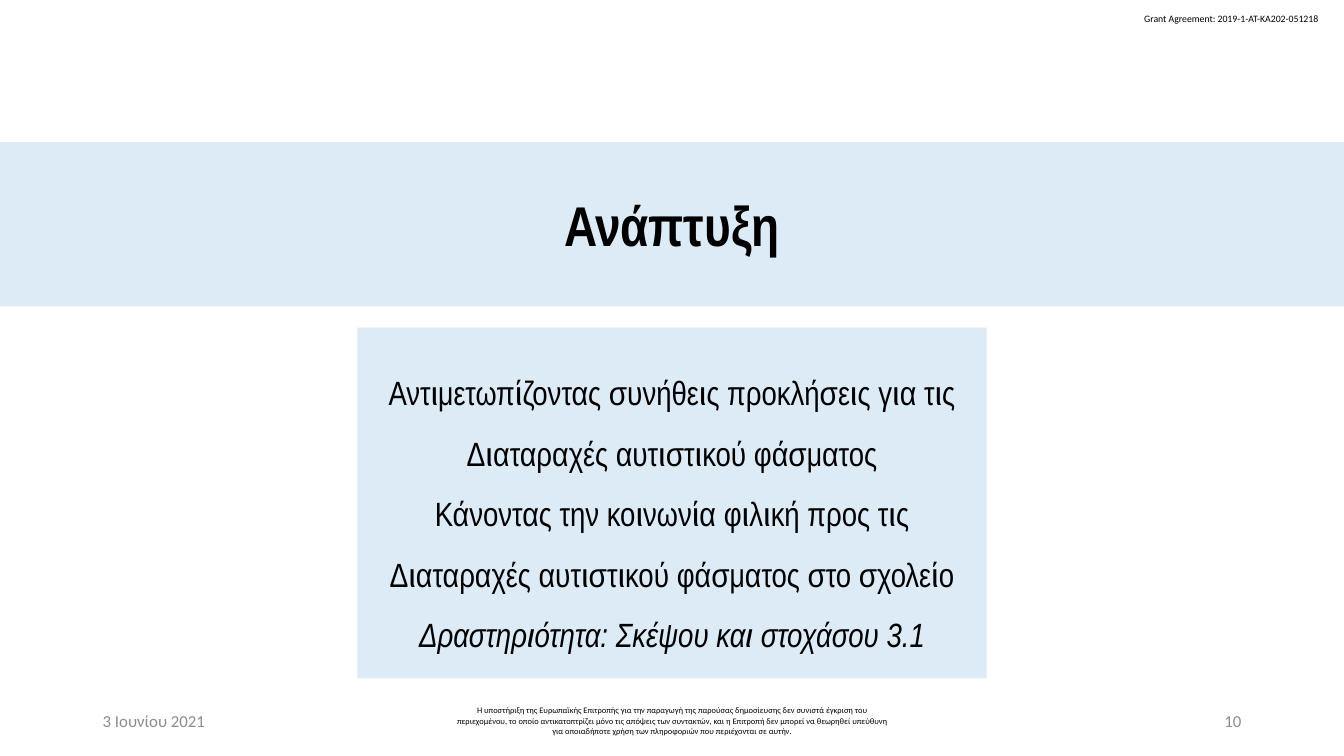
import pptx
import pptx.util
import pptx.dml.color
import pptx.enum.shapes
import pptx.enum.text

Inches, Pt = pptx.util.Inches, pptx.util.Pt
ALIGN = pptx.enum.text.PP_ALIGN
ANCHOR = pptx.enum.text.MSO_ANCHOR

WIDTH, HEIGHT = 13.33, 7.5
COLORS = {"panel": "DDEBF7", "text": "000000", "muted": "8C8C8C"}
FOOTER_TOP, FOOTER_HEIGHT = 6.95, 0.4
MARGIN, DATE_WIDTH, NOTICE_WIDTH = 0.92, 3, 4.5

TOPICS = [
    ("Αντιμετωπίζοντας συνήθεις προκλήσεις για τις Διαταραχές αυτιστικού φάσματος", False),
    ("Κάνοντας την κοινωνία φιλική προς τις Διαταραχές αυτιστικού φάσματος στο σχολείο", False),
    ("Δραστηριότητα: Σκέψου και στοχάσου 3.1", True),
]
NOTICE = (
    "Η υποστήριξη της Ευρωπαϊκής Επιτροπής για την παραγωγή της παρούσας δημοσίευσης "
    "δεν συνιστά έγκριση του περιεχομένου, το οποίο αντικατοπτρίζει μόνο τις απόψεις των "
    "συντακτών, και η Επιτροπή δεν μπορεί να θεωρηθεί υπεύθυνη για οποιαδήποτε χρήση των "
    "πληροφοριών που περιέχονται σε αυτήν."
)


def color(name):
    return pptx.dml.color.RGBColor.from_string(COLORS[name])


def write(p, text, size, font, align, ink="text", bold=False, italic=False):
    p.alignment = align
    r = p.add_run()
    r.text = text
    r.font.name, r.font.size = font, Pt(size)
    r.font.bold, r.font.italic = bold, italic
    r.font.color.rgb = color(ink)


def add_label(s, box, text, size, align, ink="text", wrap=True, anchor=ANCHOR.MIDDLE):
    tf = s.shapes.add_textbox(*map(Inches, box)).text_frame
    tf.word_wrap = wrap
    tf.vertical_anchor = anchor
    write(tf.paragraphs[0], text, size, "Calibri", align, ink)


def add_panel(s, top, width, height, lines, size, spacing=1.0, bold=False):
    """Add a horizontally centred panel with one paragraph per (text, italic) line."""
    left = (WIDTH - width) / 2
    sp = s.shapes.add_shape(pptx.enum.shapes.MSO_SHAPE.RECTANGLE,
                            *map(Inches, (left, top, width, height)))
    sp.shadow.inherit = False
    sp.fill.solid()
    sp.fill.fore_color.rgb = color("panel")
    sp.line.fill.background()
    tf = sp.text_frame
    tf.word_wrap = True
    tf.vertical_anchor = ANCHOR.MIDDLE
    tf.margin_left = tf.margin_right = Inches(0.13)
    tf.margin_top = tf.margin_bottom = Inches(0.07)
    for i, (text, italic) in enumerate(lines):
        p = tf.add_paragraph() if i else tf.paragraphs[0]
        p.line_spacing = spacing
        write(p, text, size, "Arial Narrow", ALIGN.CENTER, bold=bold, italic=italic)


def add_footer(s):
    cells = [
        (MARGIN, DATE_WIDTH, "3 Ιουνίου 2021", 12, ALIGN.LEFT, "muted"),
        ((WIDTH - NOTICE_WIDTH) / 2, NOTICE_WIDTH, NOTICE, 6, ALIGN.CENTER, "text"),
        (WIDTH - MARGIN - DATE_WIDTH, DATE_WIDTH, "10", 12, ALIGN.RIGHT, "muted"),
    ]
    for left, width, text, size, align, ink in cells:
        add_label(s, (left, FOOTER_TOP, width, FOOTER_HEIGHT), text, size, align, ink)


def main():
    prs = pptx.Presentation()
    prs.slide_width, prs.slide_height = Inches(WIDTH), Inches(HEIGHT)
    s = prs.slides.add_slide(prs.slide_layouts[6])
    add_label(s, (11.25, 0.08, 1.97, 0.22), "Grant Agreement: 2019-1-AT-KA202-051218",
              7, ALIGN.LEFT, wrap=False, anchor=ANCHOR.TOP)
    add_footer(s)
    add_panel(s, 1.41, WIDTH, 1.63, [("Ανάπτυξη", False)], 40, bold=True)
    add_panel(s, 3.25, 6.24, 3.48, TOPICS, 24, spacing=1.5)
    prs.save("out.pptx")


if __name__ == "__main__":
    main()
